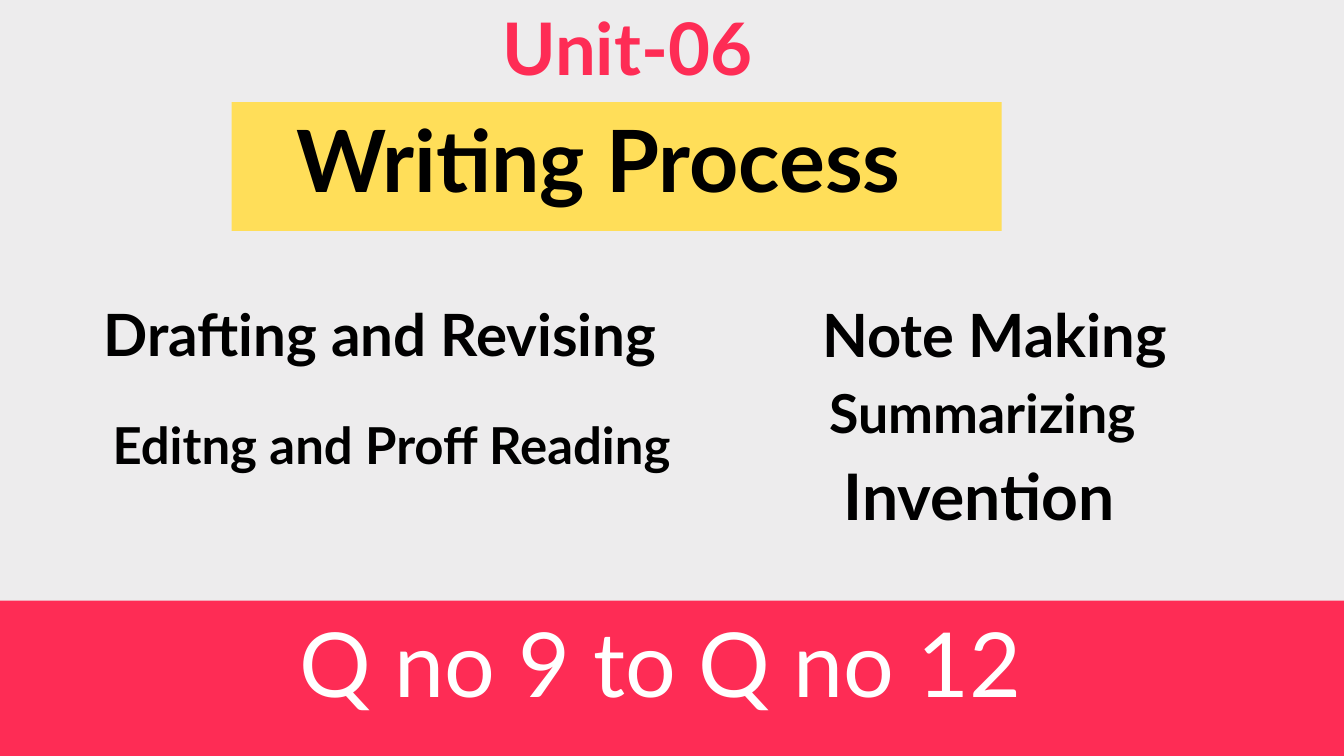
"""Build the title slide of the unit on the writing process."""
from pptx import Presentation
from pptx import util as u
from pptx.dml.color import RGBColor
from pptx.enum import shapes, text

PX = 9525
FONT = "Lato"
LEADING = 1.4
COLORS = {
    "paper": "EDECED",
    "highlight": "FFDE59",
    "accent": "FE2C55",
    "ink": "000000",
    "light": "FFFFFF",
}
TOPICS = [
    ("Note Making ", (1159, 409, 544, 114), 63.9),
    ("Summarizing", (1159, 528, 490, 104), 57.5),
    ("Invention ", (1117, 634, 586, 252), 68.7),
    ("Drafting and Revising", (108, 409, 869, 112), 62.4),
    ("Editng and Proff Reading ", (74, 577, 988, 98), 54.5),
]


def color(name):
    return RGBColor.from_string(COLORS[name])


def emu(box):
    return [length * PX for length in box]


def add_block(slide, box, fill):
    block = slide.shapes.add_shape(shapes.MSO_SHAPE.RECTANGLE, *emu(box))
    block.shadow.inherit = False
    block.fill.solid()
    block.fill.fore_color.rgb = color(fill)
    block.line.fill.background()


def add_label(slide, wording, box, size, ink="ink", bold=True, inset=0,
              anchor=text.MSO_ANCHOR.TOP,
              fit=text.MSO_AUTO_SIZE.SHAPE_TO_FIT_TEXT):
    frame = slide.shapes.add_textbox(*emu(box)).text_frame
    frame.word_wrap = True
    frame.auto_size = fit
    frame.vertical_anchor = anchor
    frame.margin_left = frame.margin_right = inset * PX
    frame.margin_top = frame.margin_bottom = inset * PX
    line = frame.paragraphs[0]
    line.text = wording
    line.alignment = text.PP_ALIGN.CENTER
    line.line_spacing = u.Pt(size * LEADING)
    line.font.name = FONT
    line.font.size = u.Pt(size)
    line.font.bold = bold
    line.font.color.rgb = color(ink)


def main():
    deck = Presentation()
    deck.slide_width, deck.slide_height = emu((1920, 1080))
    slide = deck.slides.add_slide(deck.slide_layouts[6])
    slide.background.fill.solid()
    slide.background.fill.fore_color.rgb = color("paper")

    add_block(slide, (331, 146, 1100, 184), "highlight")
    add_block(slide, (-330, 858, 2580, 222), "accent")
    add_label(slide, "Q no 9 to Q no 12 ", (-330, 786, 2580, 294), 96,
              ink="light", bold=False, inset=6,
              anchor=text.MSO_ANCHOR.MIDDLE, fit=text.MSO_AUTO_SIZE.NONE)
    add_label(slide, "Unit-06 ", (700, -16, 418, 139), 77.6, ink="accent")
    add_label(slide, "Writing Process ", (391, 128, 958, 164), 92)
    for topic, box, size in TOPICS:
        add_label(slide, topic, box, size)

    deck.save("out.pptx")


if __name__ == "__main__":
    main()
